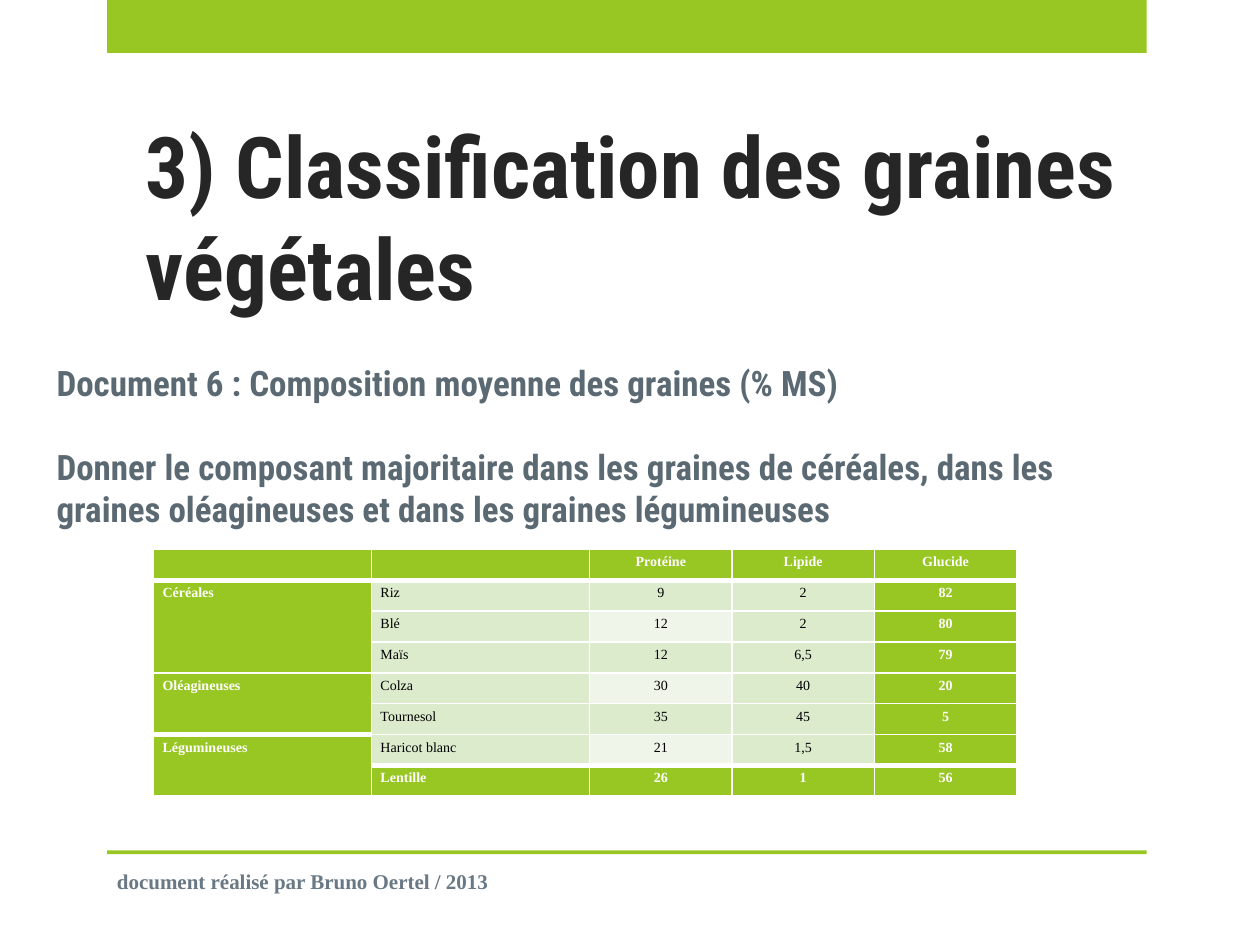
"""Build the slide on the classification of plant seeds."""
from lxml import etree
from pptx import Presentation
from pptx import util as u
from pptx.dml.color import RGBColor
from pptx.enum import shapes, text
from pptx.oxml import ns

COLORS = {"green": "98C723", "light": "DDEBCD", "pale": "EFF5E8", "white": "FFFFFF",
          "black": "000000", "title": "262626", "body": "5B6973", "footer": "687884"}
ROWS = [
    ["", "", "Protéine", "Lipide", "Glucide"],
    ["Céréales", "Riz", "9", "2", "82"],
    ["", "Blé", "12", "2", "80"],
    ["", "Maïs", "12", "6,5", "79"],
    ["Oléagineuses", "Colza", "30", "40", "20"],
    ["", "Tournesol", "35", "45", "5"],
    ["Légumineuses", "Haricot blanc", "21", "1,5", "58"],
    ["", "Lentille", "26", "1", "56"],
]
COL_WIDTHS = [1.73, 1.73, 1.13, 1.13, 1.13]
GROUPS = [(1, 3), (4, 5), (6, 7)]
THICK_EDGES = {(0, c) for c in range(5)} | {(5, 0)} | {(6, c) for c in range(1, 5)}


def style(p, size, name, color, bold=True):
    f = p.font
    f.size, f.name, f.bold = u.Pt(size), name, bold
    f.color.rgb = RGBColor.from_string(COLORS[color])


def add_border(cell, side, width):
    ln = etree.SubElement(cell._tc.get_or_add_tcPr(), ns.qn(f"a:ln{side}"), w=str(u.Pt(width)))
    fill = etree.SubElement(ln, ns.qn("a:solidFill"))
    etree.SubElement(fill, ns.qn("a:srgbClr"), val=COLORS["white"])


prs = Presentation()
prs.slide_width, prs.slide_height = u.Inches(10), u.Inches(7.5)
s = prs.slides.add_slide(prs.slide_layouts[6])

for top, height in [(0, 0.42), (6.75, 0.03)]:
    sp = s.shapes.add_shape(shapes.MSO_SHAPE.RECTANGLE, u.Inches(0.85), u.Inches(top),
                            u.Inches(8.25), u.Inches(height))
    sp.shadow.inherit = False
    sp.fill.solid()
    sp.fill.fore_color.rgb = RGBColor.from_string(COLORS["green"])
    sp.line.fill.background()

TEXTS = [
    ((1.06, 0.68, 7.95, 1.89), text.MSO_ANCHOR.BOTTOM, 48.6, "Roboto Condensed", "title",
     ["3) Classification des graines végétales"]),
    ((0.35, 2.82, 8.98, 1.78), text.MSO_ANCHOR.TOP, 20, "Roboto Condensed", "body",
     ["Document 6 : Composition moyenne des graines (% MS)",
      "Donner le composant majoritaire dans les graines de céréales, dans les "
      "graines oléagineuses et dans les graines légumineuses"]),
    ((0.83, 6.79, 5.33, 0.4), text.MSO_ANCHOR.MIDDLE, 12, "Times New Roman", "footer",
     ["document réalisé par Bruno Oertel / 2013"]),
]
for box, anchor, size, name, color, lines in TEXTS:
    tf = s.shapes.add_textbox(*map(u.Inches, box)).text_frame
    tf.word_wrap = True
    tf.vertical_anchor = anchor
    for i, line in enumerate(lines):
        p = tf.paragraphs[0] if i == 0 else tf.add_paragraph()
        p.text = line
        p.space_before = u.Pt(24 if i else 0)
        style(p, size, name, color)

table = s.shapes.add_table(len(ROWS), len(COL_WIDTHS), u.Inches(1.22), u.Inches(4.36),
                           u.Inches(6.85), u.Inches(1.96)).table
for column, width in zip(table.columns, COL_WIDTHS):
    column.width = u.Inches(width)

for r, row in enumerate(ROWS):
    for c, value in enumerate(row):
        cell = table.cell(r, c)
        accent = r in (0, len(ROWS) - 1) or c in (0, 4)
        cell.margin_left = cell.margin_right = u.Inches(0.07)
        cell.margin_top, cell.margin_bottom = u.Inches(0.04), 0
        add_border(cell, "L", 1)
        add_border(cell, "R", 1)
        add_border(cell, "T", 3 if (r - 1, c) in THICK_EDGES else 1)
        add_border(cell, "B", 3 if (r, c) in THICK_EDGES else 1)
        shade = "green" if accent else "pale" if c == 2 and r % 2 == 0 else "light"
        cell.fill.solid()
        cell.fill.fore_color.rgb = RGBColor.from_string(COLORS[shade])
        p = cell.text_frame.paragraphs[0]
        if value:
            p.text = value
        p.alignment = text.PP_ALIGN.CENTER if c > 1 else text.PP_ALIGN.LEFT
        style(p, 8, "Times New Roman", "white" if accent else "black", accent)

for first, last in GROUPS:
    table.cell(first, 0).merge(table.cell(last, 0))

prs.save("out.pptx")
